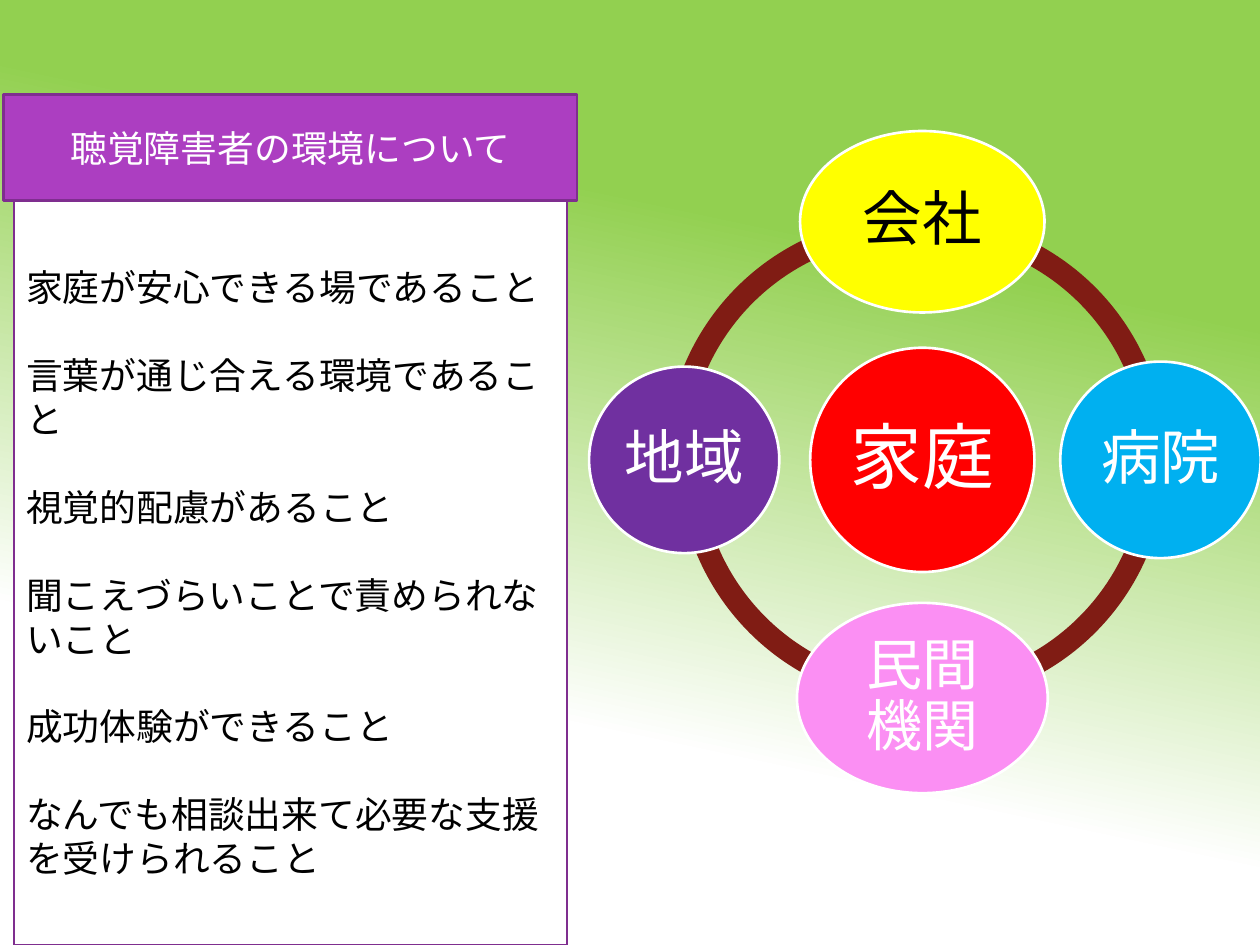
from pptx import Presentation
from pptx.dml.color import RGBColor
from pptx.enum.lang import MSO_LANGUAGE_ID
from pptx.enum.shapes import MSO_SHAPE
from pptx.enum.text import MSO_ANCHOR, PP_ALIGN
from pptx.util import Inches, Pt

RECT, OVAL, ARC = MSO_SHAPE.RECTANGLE, MSO_SHAPE.OVAL, MSO_SHAPE.BLOCK_ARC
LEFT, CENTER = PP_ALIGN.LEFT, PP_ALIGN.CENTER
MIDDLE = MSO_ANCHOR.MIDDLE
JAPANESE = MSO_LANGUAGE_ID.JAPANESE

TITLE = "聴覚障害者の環境について"
NEEDS = [
    "家庭が安心できる場であること",
    "言葉が通じ合える環境であること",
    "視覚的配慮があること",
    "聞こえづらいことで責められないこと",
    "成功体験ができること",
    "なんでも相談出来て必要な支援を受けられること",
]
HUB = (7.32, 3.65)
REACH = 1.89
NODES = [
    ("家庭", 0, 0, 1.78, 1.78, 41, "FF0000", "FFFFFF"),
    ("会社", 0, -1, 1.94, 1.44, 34, "FFFF00", "000000"),
    ("病院", 1, 0, 1.59, 1.56, 34, "00B0F0", "FFFFFF"),
    ("民間機関", 0, 1, 1.99, 1.51, 32, "FB8FF3", "FFFFFF"),
    ("地域", -1, 0, 1.51, 1.48, 34, "7030A0", "FFFFFF"),
]
RING = 3.88
QUARTER = 54
ARCS = [(5.28, 2), (5.38, 1), (5.38, 0), (5.38, 3)]
LINE = Pt(25.1)


def rgb(code):
    return RGBColor.from_string(code)


def add_box(kind, x, y, w, h, fill, edge=None):
    box = slide.shapes.add_shape(kind, Inches(x), Inches(y), Inches(w), Inches(h))
    box.shadow.inherit = False
    box.fill.solid()
    box.fill.fore_color.rgb = rgb(fill)
    if edge:
        box.line.color.rgb = rgb(edge)
        box.line.width = Pt(1.5)
    else:
        box.line.fill.background()
    return box


def set_text(box, text, size, color, align=CENTER, face="Calibri"):
    frame = box.text_frame
    frame.text = text
    frame.word_wrap = True
    frame.vertical_anchor = MIDDLE
    for para in frame.paragraphs:
        para.alignment = align
        for run in para.runs:
            run.font.size = Pt(size)
            run.font.name = face
            run.font.color.rgb = rgb(color)
            run.font.language_id = JAPANESE
    return frame


deck = Presentation()
deck.slide_width, deck.slide_height = Inches(10), Inches(7.5)
slide = deck.slides.add_slide(deck.slide_layouts[6])

back = slide.background.fill
back.gradient()
back.gradient_angle = 258
for stop, (place, code) in zip(back.gradient_stops, [(0.27, "92D050"), (0.72, "FFFFFF")]):
    stop.position = place
    stop.color.rgb = rgb(code)

for x, turn in ARCS:
    arc = add_box(ARC, x, HUB[1] - RING / 2, RING, RING, "801C14")
    arc.adjustments[0] = turn * QUARTER
    arc.adjustments[1] = (turn + 1) % 4 * QUARTER
    arc.adjustments[2] = 0.046

for text, dx, dy, w, h, size, fill, color in NODES:
    x = HUB[0] + dx * REACH - w / 2
    y = HUB[1] + dy * REACH - h / 2
    node = add_box(OVAL, x, y, w, h, fill, "FFFFFF")
    frame = set_text(node, text, size, color)
    frame.paragraphs[0].line_spacing = 0.9
    frame.margin_left = frame.margin_right = Inches(0.05)
    frame.margin_top = frame.margin_bottom = Inches(0.05)

panel = add_box(RECT, 0.11, 1.59, 4.39, 5.91, "FFFFFF", "7F2E8F")
frame = set_text(panel, "\n".join(NEEDS), 21, "000000", LEFT, "Noto Sans CJK JP")
for i, para in enumerate(frame.paragraphs):
    para.line_spacing = LINE
    para.space_before = LINE if i else Pt(0)

head = add_box(RECT, 0.03, 0.75, 4.55, 0.84, "AC3EC1", "7F2E8F")
set_text(head, TITLE, 21, "FFFFFF")

deck.save("out.pptx")
